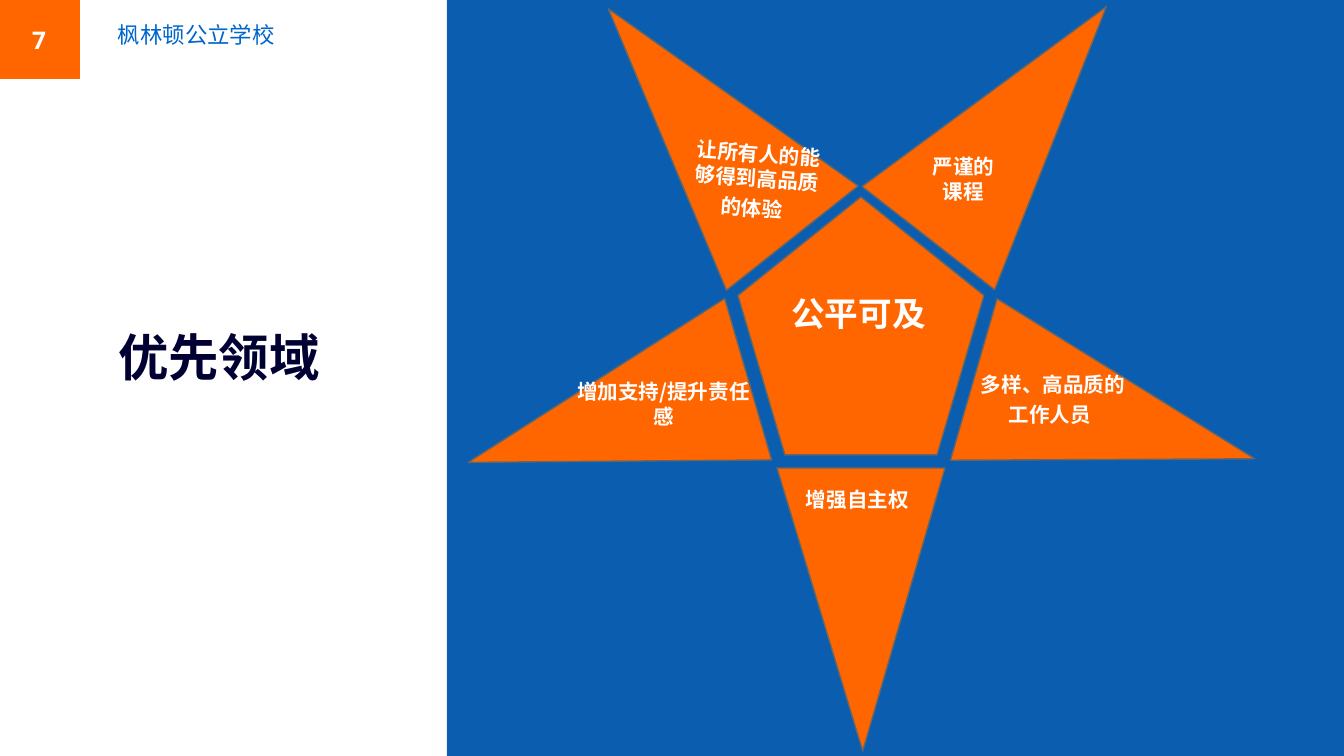
from lxml import etree
from pptx import Presentation
from pptx.dml.color import RGBColor
from pptx.enum.shapes import MSO_SHAPE
from pptx.enum.text import MSO_ANCHOR, PP_ALIGN
from pptx.oxml.ns import qn
from pptx.util import Pt

PX = 9144000 / 1344
RECT, TRIANGLE, PENTAGON = MSO_SHAPE.RECTANGLE, MSO_SHAPE.ISOSCELES_TRIANGLE, MSO_SHAPE.REGULAR_PENTAGON
TOP, MIDDLE, BOTTOM = MSO_ANCHOR.TOP, MSO_ANCHOR.MIDDLE, MSO_ANCHOR.BOTTOM
LEFT, CENTER = PP_ALIGN.LEFT, PP_ALIGN.CENTER

BACKDROP = RGBColor(0x29, 0x46, 0x67)
BLUE = RGBColor(0x00, 0x66, 0xCC)
NAVY = RGBColor(0x00, 0x00, 0x33)
ORANGE = RGBColor(0xFF, 0x66, 0x00)
GRAY = RGBColor(0x66, 0x66, 0x66)
WHITE = RGBColor(0xFF, 0xFF, 0xFF)
CJK = "Noto Sans CJK SC"

prs = Presentation()
prs.slide_width, prs.slide_height = round(1344 * PX), round(756 * PX)
s = prs.slides.add_slide(prs.slide_layouts[6])
s.background.fill.solid()
s.background.fill.fore_color.rgb = BACKDROP


def add_shape(kind, box, color, outlined=False, rotation=0):
    sp = s.shapes.add_shape(kind, *(round(v * PX) for v in box))
    sp.shadow.inherit = False
    sp.rotation = rotation
    sp.fill.solid()
    sp.fill.fore_color.rgb = color
    if outlined:
        sp.line.color.rgb = GRAY
        sp.line.width = Pt(0.75)
    else:
        sp.line.fill.background()
    return sp


def add_text(box, lines, size, color=WHITE, bold=True, align=CENTER, anchor=TOP,
             font=CJK, rotation=0):
    sp = s.shapes.add_textbox(*(round(v * PX) for v in box))
    sp.rotation = rotation
    tf = sp.text_frame
    tf.word_wrap = True
    tf.vertical_anchor = anchor
    tf.margin_left = tf.margin_right = tf.margin_top = tf.margin_bottom = round(13 * PX)
    tf.text = lines
    for p in tf.paragraphs:
        p.alignment = align
        p.font.size = Pt(size)
        p.font.bold = bold
        p.font.color.rgb = color
        p.font.name = font
        ea = etree.SubElement(p.font._element, qn("a:ea"))
        ea.set("typeface", font)
    return tf


# Left and right panels
add_shape(RECT, (0, 0, 447, 756), WHITE)
panel = add_shape(RECT, (447, 0, 897, 756), BLUE)
rgb = panel.fill._xPr.find(".//" + qn("a:srgbClr"))
etree.SubElement(rgb, qn("a:alpha")).set("val", "72000")

# Page number, header and title
add_shape(RECT, (0, 0, 80, 79), ORANGE)
add_text((-1, 0, 80, 79), "7", 13, anchor=MIDDLE, font="Open Sans")
add_text((105, 8, 305, 69), "枫林顿公立学校", 12, BLUE, bold=False, align=LEFT)
add_text((61, 301, 316, 99), "优先领域", 27, NAVY, anchor=BOTTOM)

# Star: centre and five points
add_shape(PENTAGON, (738, 197, 246, 258), ORANGE, outlined=True)
for x, y, h, rotation in [
    (524, 274, 292, 253.8),
    (1030, 274, 292, 106.1),
    (777, 468, 283, 180),
    (934, -23, 292, 37.9),
    (617, -24, 294, 321.6),
]:
    point = add_shape(TRIANGLE, (x, y, 168, h), ORANGE, True, rotation)
    point.adjustments[0] = 0.49

# Labels; a larger closing space opens up the last line of some
add_text((751, 280, 215, 95), "公平可及", 18)
for box, lines, rotation, tall_end in [
    ((562, 366, 203, 69), "增加支持/提升责任感", 0, False),
    ((961, 359, 184, 87), "多样、高品质的工作人员", 0, True),
    ((759, 468, 203, 75), "增强自主权", 0, True),
    ((832, 141, 263, 94), "严谨的\n课程", 0, False),
    ((675, 128, 165, 90), "让所有人的能够得到高品质的体验", 4.3, True),
]:
    tf = add_text(box, lines, 11, rotation=rotation)
    if tall_end:
        r = tf.paragraphs[-1].add_run()
        r.text = " "
        r.font.size = Pt(14)

prs.save("out.pptx")
